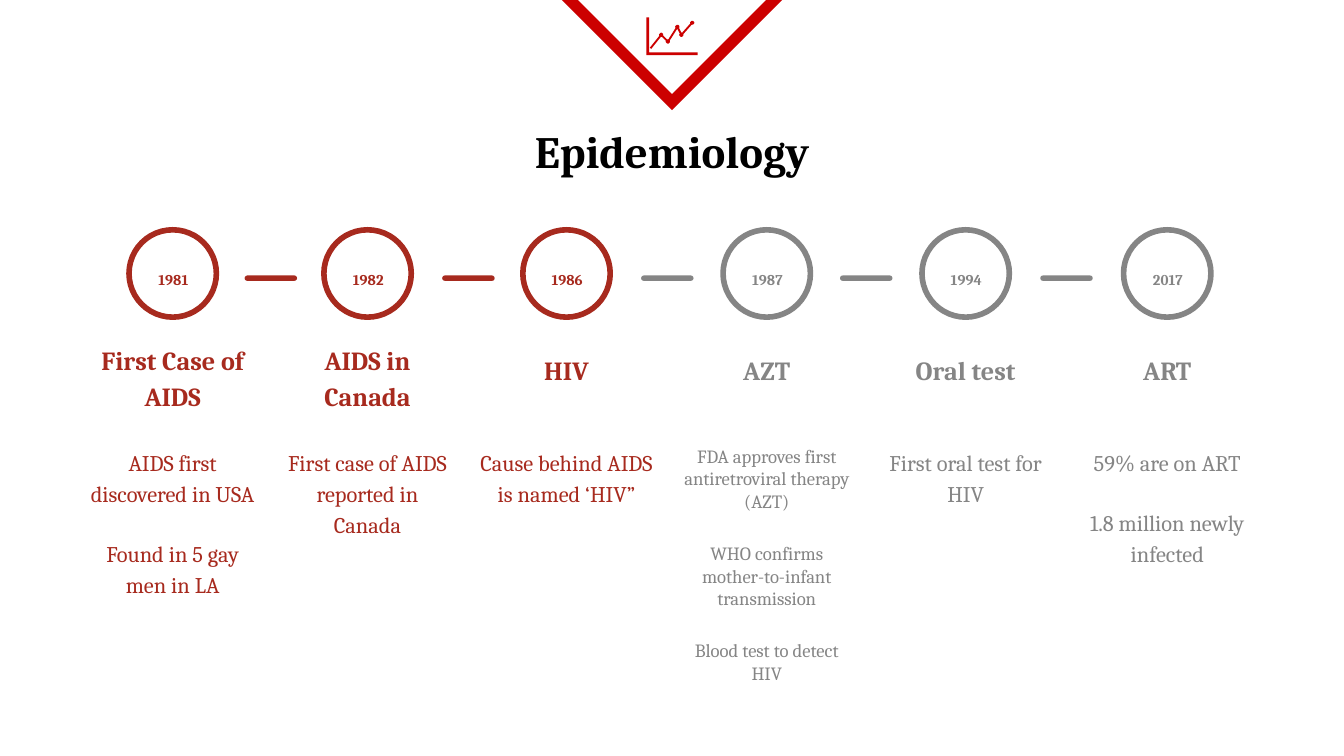
from pptx import Presentation
from pptx.dml.color import RGBColor
from pptx.enum.shapes import MSO_SHAPE
from pptx.enum.text import MSO_ANCHOR, PP_ALIGN
from pptx.oxml.ns import qn
from pptx.util import Inches, Pt
from lxml import etree

TRIANGLE = MSO_SHAPE.ISOSCELES_TRIANGLE
OVAL = MSO_SHAPE.OVAL
BAR = MSO_SHAPE.ROUNDED_RECTANGLE
TOP, BOTTOM = MSO_ANCHOR.TOP, MSO_ANCHOR.BOTTOM
CENTER = PP_ALIGN.CENTER
RED, BRICK, GRAY = "CC0000", "A72A1E", "858585"


def paint(sp, fill=None, line=None, width=0):
    sp.shadow.inherit = False
    for part, color in ((sp.fill, fill), (sp.line.fill, line)):
        if color:
            part.solid()
            part.fore_color.rgb = RGBColor.from_string(color)
        else:
            part.background()
    if line:
        sp.line.width = Pt(width)


def write(sp, lines, size, color, bold=False, anchor=TOP, spacing=1.15):
    tf = sp.text_frame
    tf.word_wrap = True
    tf.vertical_anchor = anchor
    tf.margin_left = tf.margin_right = tf.margin_top = tf.margin_bottom = Inches(0.1)
    tf.text = "\n".join(lines)
    for i, p in enumerate(tf.paragraphs):
        p.alignment = CENTER
        p.line_spacing = spacing
        p.space_before = Pt(16 if i else 0)
        font = p.runs[0].font
        font.name, font.size, font.bold = "Cambria", Pt(size), bold
        font.color.rgb = RGBColor.from_string(color)


prs = Presentation()
prs.slide_width, prs.slide_height = Inches(10), Inches(5.625)
s = prs.slides.add_slide(prs.slide_layouts[5])

banner = s.shapes.add_shape(TRIANGLE, Inches(4.18), Inches(-0.06), Inches(1.64), Inches(0.82))
banner.rotation = 180
paint(banner, line=RED, width=6)
etree.SubElement(banner.line._get_or_add_ln(), qn("a:miter"), lim="800000")

title = s.shapes.title
title.left, title.top, title.width, title.height = Inches(1.13), Inches(0.82), Inches(7.74), Inches(0.59)
write(title, ["Epidemiology"], 24, "000000", bold=True, spacing=1)

events = [
    (0.96, 1.43, BRICK, "1981", "First Case of AIDS", 2.67, 12,
     ["AIDS first discovered in USA", "Found in 5 gay men in LA"]),
    (2.41, 1.43, BRICK, "1982", "AIDS in Canada", 2.67, 12,
     ["First case of AIDS reported in Canada"]),
    (3.89, 1.49, BRICK, "1986", "HIV", 2.48, 12,
     ["Cause behind AIDS is named ‘HIV”"]),
    (5.38, 1.43, GRAY, "1987", "AZT", 2.48, 10,
     ["FDA approves first antiretroviral therapy (AZT)",
      "WHO confirms mother-to-infant transmission", "Blood test to detect HIV"]),
    (6.86, 1.49, GRAY, "1994", "Oral test", 2.48, 12,
     ["First oral test for HIV"]),
    (8.36, 1.49, GRAY, "2017", "ART", 2.48, 12,
     ["59% are on ART", "1.8 million newly infected"]),
]
for left, width, color, year, heading, heading_top, size, details in events:
    circle = s.shapes.add_shape(OVAL, Inches(left), Inches(1.71), Inches(0.65), Inches(0.65))
    paint(circle, line=color, width=3)
    year_box = s.shapes.add_textbox(Inches(left + 0.09), Inches(1.92), Inches(0.48), Inches(0.35))
    write(year_box, [year], 8, color, bold=True)
    text_left = Inches(left + 0.325 - width / 2)
    heading_box = s.shapes.add_textbox(text_left, Inches(heading_top), Inches(width), Inches(0.49))
    write(heading_box, [heading], 14, color, bold=True, anchor=BOTTOM)
    detail_box = s.shapes.add_textbox(text_left, Inches(3.21), Inches(width), Inches(0.81))
    write(detail_box, details, size, color, spacing=1 if size == 10 else 1.15)

bars = [(1.82, BRICK), (3.29, BRICK), (4.77, GRAY), (6.25, GRAY), (7.74, GRAY)]
for left, color in bars:
    bar = s.shapes.add_shape(BAR, Inches(left), Inches(2.05), Inches(0.39), Inches(0.04))
    bar.adjustments[0] = 0.5
    paint(bar, fill=color)

axes = [(4.81, 0.13), (4.83, 0.13), (4.83, 0.39), (5.19, 0.39), (5.19, 0.41), (4.81, 0.41)]
corners = [(Inches(x), Inches(y)) for x, y in axes]
builder = s.shapes.build_freeform(*corners[0])
builder.add_line_segments(corners[1:])
paint(builder.convert_to_shape(), fill=RED)

trend = [(4.84, 0.36), (4.92, 0.26), (4.97, 0.31), (5.04, 0.2), (5.07, 0.26), (5.15, 0.17)]
points = [(Inches(x), Inches(y)) for x, y in trend]
builder = s.shapes.build_freeform(*points[0])
builder.add_line_segments(points[1:], close=False)
r = Inches(0.01)
for x, y in points[1:]:
    builder.move_to(x - r, y)
    builder.add_line_segments([(x, y - r), (x + r, y), (x, y + r)])
paint(builder.convert_to_shape(), line=RED, width=1)

prs.save("out.pptx")
